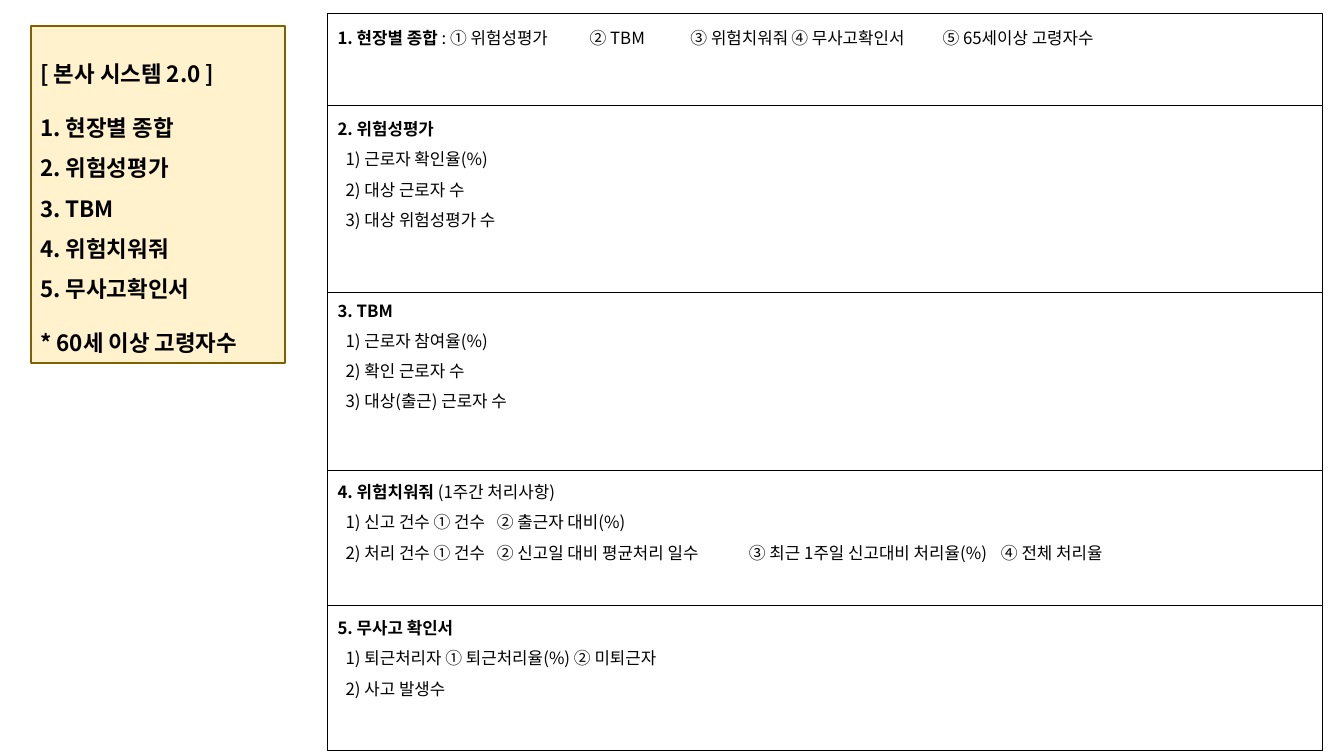
from lxml.etree import SubElement
from pptx import Presentation
from pptx.dml.color import RGBColor
from pptx.enum.shapes import MSO_CONNECTOR, MSO_SHAPE
from pptx.enum.text import MSO_ANCHOR, PP_ALIGN
from pptx.oxml.ns import qn
from pptx.util import Inches, Pt

BLACK = RGBColor(0x00, 0x00, 0x00)
CREAM = RGBColor(0xFF, 0xF2, 0xCC)
BROWN = RGBColor(0x80, 0x60, 0x00)
FONT = "Noto Sans CJK KR"
LEADING = 1.2  # single line height as a share of the text size
WIDE = 1.5     # line spacing of the lists

prs = Presentation()
prs.slide_width, prs.slide_height = Inches(13.33), Inches(7.5)
slide = prs.slides.add_slide(prs.slide_layouts[6])


def add_panel(left, top, width, height, line_color, line_width):
    panel = slide.shapes.add_shape(MSO_SHAPE.RECTANGLE, Inches(left), Inches(top),
                                   Inches(width), Inches(height))
    panel.shadow.inherit = False
    panel.fill.background()
    panel.line.color.rgb = line_color
    panel.line.width = Pt(line_width)
    panel.text_frame.word_wrap = True
    panel.text_frame.vertical_anchor = MSO_ANCHOR.TOP
    return panel


def add_line(frame, runs, size, spacing, gap=0, indent=0, stops=()):
    """Add one paragraph; runs are (text, bold) pairs, gap is in single lines."""
    paragraph = frame.paragraphs[0]
    if paragraph.runs:
        paragraph = frame.add_paragraph()
    paragraph.alignment = PP_ALIGN.LEFT
    paragraph.line_spacing = Pt(size * LEADING * spacing)
    paragraph.space_before = Pt(size * LEADING * gap)
    properties = paragraph._p.get_or_add_pPr()
    properties.set("marL", str(Inches(indent)))
    properties.set("indent", "0")
    if stops:
        tabs = SubElement(properties, qn("a:tabLst"))
        for stop in stops:
            SubElement(tabs, qn("a:tab"), pos=str(Inches(stop)), algn="l")
    font = paragraph.font
    font.name, font.size, font.color.rgb = FONT, Pt(size), BLACK
    SubElement(font._element, qn("a:ea"), typeface=FONT)
    for text, bold in runs:
        run = paragraph.add_run()
        run.text = text
        run.font.bold = bold


# Menu on the left: text, line spacing, gap above
menu = add_panel(0.31, 0.26, 2.52, 3.34, BROWN, 1.5)
menu.fill.solid()
menu.fill.fore_color.rgb = CREAM
menu_text = menu.text_frame
menu_text.margin_left, menu_text.margin_right = Inches(0.09), Inches(0.04)
menu_text.margin_top, menu_text.margin_bottom = Inches(0.34), Inches(0.04)
for text, spacing, gap in [
    ("[ 본사 시스템 2.0 ]", 1, 0),
    ("1. 현장별 종합", 1, 1),
    ("2. 위험성평가", WIDE, 0),
    ("3. TBM", WIDE, 0),
    ("4. 위험치워줘", WIDE, 0),
    ("5. 무사고확인서", WIDE, 0),
    ("* 60세 이상 고령자수", 1, 1),
]:
    add_line(menu_text, [(text, True)], 16, spacing, gap)

# Sections on the right: gap above, heading, remark, remark tab stops, items
SECTIONS = [
    (0, "1. 현장별 종합 ",
     ": ① 위험성평가\t② TBM\t③ 위험치워줘\t④ 무사고확인서\t⑤ 65세이상 고령자수",
     (2.37, 3.08, 4.23, 5.5), []),
    (3, "2. 위험성평가", "", (),
     [("1) 근로자 확인율(%)", ()),
      ("2) 대상 근로자 수", ()),
      ("3) 대상 위험성평가 수", ())]),
    (3, "3. TBM", "", (),
     [("1) 근로자 참여율(%)", ()),
      ("2) 확인 근로자 수", ()),
      ("3) 대상(출근) 근로자 수", ())]),
    (3, "4. 위험치워줘 ", "(1주간 처리사항)", (),
     [("1) 신고 건수 ① 건수\t② 출근자 대비(%)", (1.67,)),
      ("2) 처리 건수 ① 건수\t② 신고일 대비 평균처리 일수"
       "\t③ 최근 1주일 신고대비 처리율(%)\t④ 전체 처리율", (1.67, 3.84, 6.47))]),
    (2.25, "5. 무사고 확인서", "", (),
     [("1) 퇴근처리자 ① 퇴근처리율(%) ② 미퇴근자", ()),
      ("2) 사고 발생수", ())]),
]
LEFT, WIDTH = 3.25, 9.87
details = add_panel(LEFT, 0.13, WIDTH, 7.32, BLACK, 0.75)
for gap, heading, remark, stops, items in SECTIONS:
    runs = [(heading, True)] + ([(remark, False)] if remark else [])
    add_line(details.text_frame, runs, 12, WIDE, gap, 0, stops)
    for text, item_stops in items:
        add_line(details.text_frame, [(text, False)], 12, WIDE, 0, 0.08, item_stops)

# Rules between the sections
for y in (1.05, 2.9, 4.67, 6.01):
    rule = slide.shapes.add_connector(MSO_CONNECTOR.STRAIGHT, Inches(LEFT), Inches(y),
                                      Inches(LEFT + WIDTH), Inches(y))
    rule.line.color.rgb = BLACK
    rule.line.width = Pt(0.5)
    SubElement(rule._element.spPr, qn("a:effectLst"))

prs.save("out.pptx")
